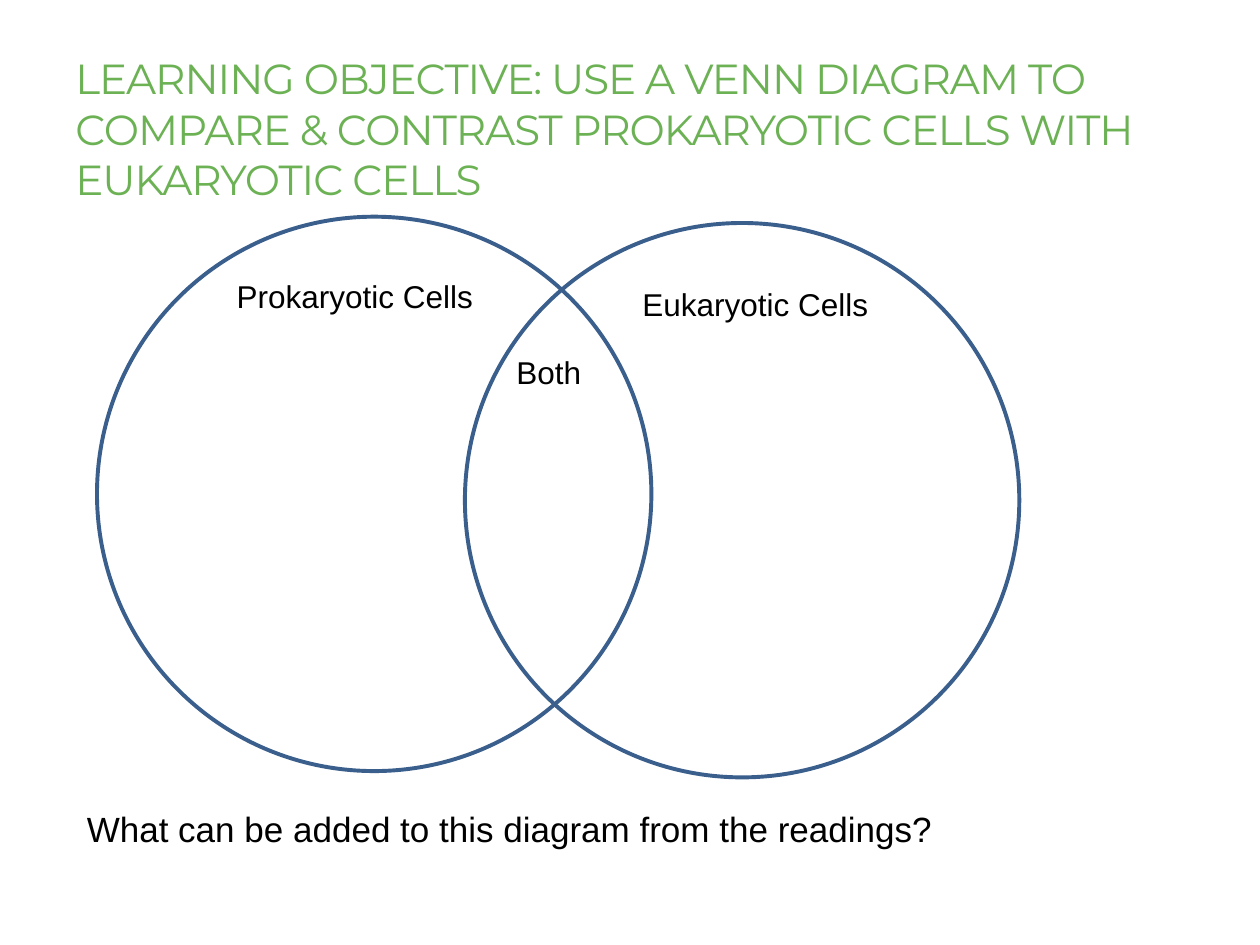
import pptx
import pptx.dml.color
import pptx.enum.shapes
import pptx.enum.text
import pptx.util

GREEN = pptx.dml.color.RGBColor(0x6C, 0xB2, 0x55)
BLUE = pptx.dml.color.RGBColor(0x3A, 0x5F, 0x8C)
BLACK = pptx.dml.color.RGBColor(0, 0, 0)
WHITE = pptx.dml.color.RGBColor(0xFF, 0xFF, 0xFF)

SLIDE_WIDTH = pptx.util.Inches(10)
SLIDE_HEIGHT = pptx.util.Inches(7.5)
COLUMNS = 100
UNIT = SLIDE_WIDTH / COLUMNS


def place(left, top, width, height):
    """Turn grid columns and rows into slide lengths."""
    return [round(value * UNIT) for value in (left, top, width, height)]


def add_text(page, box, text, size, font="Arial", color=BLACK):
    """Add a wrapped text box and return its frame."""
    frame = page.shapes.add_textbox(*place(*box)).text_frame
    frame.word_wrap = True
    para = frame.paragraphs[0]
    para.text = text
    para.font.size = pptx.util.Pt(size)
    para.font.name = font
    para.font.color.rgb = color
    return frame


def add_objective(page, box):
    """Add the bottom-anchored heading with tightened letters."""
    text = ("LEARNING OBJECTIVE: USE A VENN DIAGRAM TO COMPARE & CONTRAST "
            "PROKARYOTIC CELLS WITH EUKARYOTIC CELLS")
    frame = add_text(page, box, text, 24, "Montserrat", GREEN)
    frame.vertical_anchor = pptx.enum.text.MSO_ANCHOR.BOTTOM
    for span in frame.paragraphs[0].runs:
        span._r.get_or_add_rPr().set("spc", "-60")


def add_circle(page, left, top, diameter, filled):
    """Add one outlined circle of the diagram."""
    circle = page.shapes.add_shape(
        pptx.enum.shapes.MSO_SHAPE.OVAL, *place(left, top, diameter, diameter))
    circle.shadow.inherit = False
    if filled:
        circle.fill.solid()
        circle.fill.fore_color.rgb = WHITE
    else:
        circle.fill.background()
    circle.line.color.rgb = BLUE
    circle.line.width = pptx.util.Pt(2.25)


def add_venn(page, box):
    """Add two overlapping circles and their three labels."""
    left, top, width, height = box
    drop = 0.5
    diameter = height - drop
    add_circle(page, left, top, diameter, True)
    add_circle(page, left + width - diameter, top + drop, diameter, False)
    labels = [
        ("Prokaryotic Cells", 10.1, 4.3, 23.8),
        ("Eukaryotic Cells", 42.3, 4.9, 20),
        ("Both", 32.3, 10.3, 20),
    ]
    for text, across, down, label_width in labels:
        frame = add_text(page, (left + across, top + down, label_width, 4), text, 18)
        frame.auto_size = pptx.enum.text.MSO_AUTO_SIZE.SHAPE_TO_FIT_TEXT


def add_question(page, box):
    """Add the closing question below the diagram."""
    frame = add_text(page, box, "What can be added to this diagram from the readings?", 20)
    frame.paragraphs[0].space_after = pptx.util.Pt(6)


def main():
    """Build and save the slide."""
    deck = pptx.Presentation()
    deck.slide_width = SLIDE_WIDTH
    deck.slide_height = SLIDE_HEIGHT
    page = deck.slides.add_slide(deck.slide_layouts[6])
    add_objective(page, (5, 2.6, 88.2, 14.1))
    add_question(page, (5.9, 63.6, 88.2, 8.7))
    add_venn(page, (7.7, 17.2, 73.2, 44.5))
    deck.save("out.pptx")


if __name__ == "__main__":
    main()
